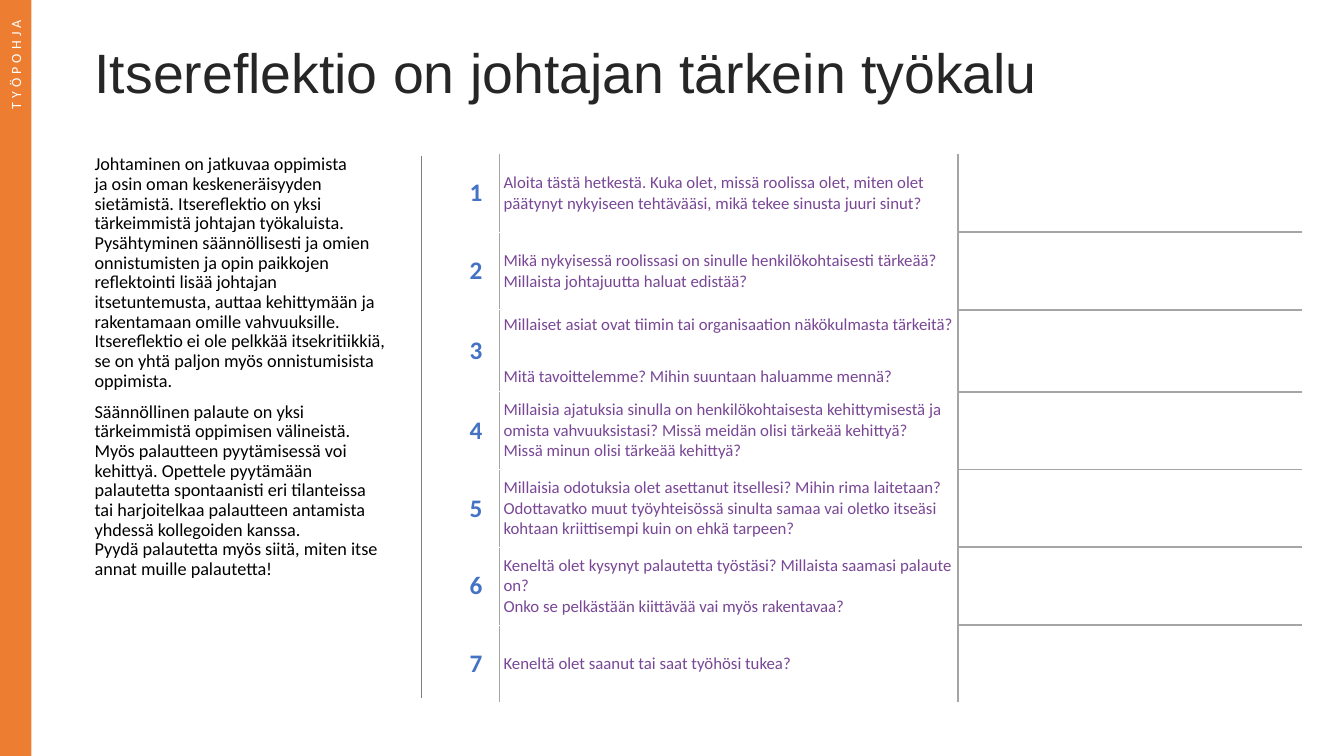
from lxml.etree import SubElement
from pptx import Presentation
from pptx.dml.color import RGBColor
from pptx.enum.shapes import MSO_CONNECTOR, MSO_SHAPE
from pptx.enum.text import MSO_ANCHOR as Anchor, MSO_AUTO_SIZE as AutoSize, PP_ALIGN as Align
from pptx.oxml.ns import qn
from pptx.util import Cm, Pt

COLORS = {
    "accent": "ED7D31", "number": "4472C4", "question": "794796", "grid": "A5A5A5",
    "divider": "7F7F7F", "title": "262626", "body": "000000", "white": "FFFFFF",
}

INTRO = [
    "Johtaminen on jatkuvaa oppimista\vja osin oman keskeneräisyyden sietämistä. "
    "Itsereflektio on yksi tärkeimmistä johtajan työkaluista. Pysähtyminen säännöllisesti "
    "ja omien onnistumisten ja opin paikkojen reflektointi lisää johtajan itsetuntemusta, "
    "auttaa kehittymään ja rakentamaan omille vahvuuksille. Itsereflektio ei ole pelkkää "
    "itsekritiikkiä, se on yhtä paljon myös onnistumisista oppimista.",
    "Säännöllinen palaute on yksi tärkeimmistä oppimisen välineistä. Myös palautteen "
    "pyytämisessä voi kehittyä. Opettele pyytämään palautetta spontaanisti eri tilanteissa "
    "tai harjoitelkaa palautteen antamista yhdessä kollegoiden kanssa.\v"
    "Pyydä palautetta myös siitä, miten itse annat muille palautetta!",
]

QUESTIONS = [
    "Aloita tästä hetkestä. Kuka olet, missä roolissa olet, miten olet\v"
    "päätynyt nykyiseen tehtävääsi, mikä tekee sinusta juuri sinut?",
    "Mikä nykyisessä roolissasi on sinulle henkilökohtaisesti tärkeää?\v"
    "Millaista johtajuutta haluat edistää?",
    "Millaiset asiat ovat tiimin tai organisaation näkökulmasta tärkeitä? \v"
    "Mitä tavoittelemme? Mihin suuntaan haluamme mennä?",
    "Millaisia ajatuksia sinulla on henkilökohtaisesta kehittymisestä ja\v"
    "omista vahvuuksistasi? Missä meidän olisi tärkeää kehittyä?\v"
    "Missä minun olisi tärkeää kehittyä?",
    "Millaisia odotuksia olet asettanut itsellesi? Mihin rima laitetaan?\v"
    "Odottavatko muut työyhteisössä sinulta samaa vai oletko itseäsi\v"
    "kohtaan kriittisempi kuin on ehkä tarpeen?",
    "Keneltä olet kysynyt palautetta työstäsi? Millaista saamasi palaute on?\v"
    "Onko se pelkästään kiittävää vai myös rakentavaa?",
    "Keneltä olet saanut tai saat työhösi tukea?",
]


def rgb(name):
    return RGBColor.from_string(COLORS[name])


def write(frame, *paragraphs, size, color, font="Calibri", bold=False, align=Align.LEFT,
          line_spacing=1.0, after=0, tracking=None):
    """Fill a text frame with unbulleted paragraphs that share one format."""
    frame.word_wrap = True
    for index, wording in enumerate(paragraphs):
        paragraph = frame.paragraphs[0] if index == 0 else frame.add_paragraph()
        paragraph.text = wording
        paragraph.alignment = align
        paragraph.line_spacing = line_spacing
        paragraph.space_before, paragraph.space_after = Pt(0), Pt(after)
        properties = paragraph._p.get_or_add_pPr()
        properties.set("marL", "0")
        properties.set("indent", "0")
        SubElement(properties, qn("a:buNone"))
        for run in paragraph.runs:
            run.font.name, run.font.size, run.font.bold = font, Pt(size), bold
            run.font.color.rgb = rgb(color)
            if tracking:
                run._r.get_or_add_rPr().set("spc", str(tracking * 100))


def set_borders(cell, **sides):
    """Draw cell borders; each side is a (colour name, points) pair or None."""
    properties = cell._tc.get_or_add_tcPr()
    for side in "LRTB":
        style = sides.get(side)
        border = SubElement(properties, qn(f"a:ln{side}"))
        if style is None:
            SubElement(border, qn("a:noFill"))
        else:
            border.set("w", str(Pt(style[1])))
            fill = SubElement(border, qn("a:solidFill"))
            SubElement(fill, qn("a:srgbClr"), val=COLORS[style[0]])


class WorkshopSlide:
    GRID = ("grid", 1.5)
    GAP = ("white", 0.75)

    def __init__(self, presentation):
        self.slide = presentation.slides.add_slide(presentation.slide_layouts[1])
        self.shapes = self.slide.shapes

    def placeholder(self, index, box, *paragraphs, anchor, **style):
        holder = self.slide.placeholders[index]
        holder.left, holder.top, holder.width, holder.height = map(Cm, box)
        holder.text_frame.auto_size = AutoSize.NONE
        holder.text_frame.vertical_anchor = anchor
        write(holder.text_frame, *paragraphs, line_spacing=0.9, **style)

    def side_band(self, box, label):
        band = self.shapes.add_shape(MSO_SHAPE.RECTANGLE, *map(Cm, box))
        band.shadow.inherit = False
        band.fill.solid()
        band.fill.fore_color.rgb = rgb("accent")
        band.line.fill.background()
        frame = band.text_frame
        frame.margin_top = Cm(0.51)
        frame.vertical_anchor = Anchor.MIDDLE
        frame._txBody.bodyPr.set("vert", "vert270")
        write(frame, label, size=10, color="white", align=Align.RIGHT, tracking=3)

    def divider(self, x, top, bottom):
        line = self.shapes.add_connector(MSO_CONNECTOR.STRAIGHT, Cm(x), Cm(top), Cm(x), Cm(bottom))
        line.line.color.rgb = rgb("divider")
        line.line.width = Pt(0.5)
        SubElement(line._element.spPr, qn("a:effectLst"))

    def question_table(self, left, top, widths, row_height, questions):
        """Numbered questions, each followed by an empty field for the answer."""
        count = len(questions)
        table = self.shapes.add_table(count, len(widths), Cm(left), Cm(top),
                                      Cm(sum(widths)), Cm(row_height * count)).table
        table.first_row = table.horz_banding = False
        for column, width in zip(table.columns, widths):
            column.width = Cm(width)
        for index, question in enumerate(questions):
            table.rows[index].height = Cm(row_height)
            number, prompt, answer = table.rows[index].cells
            last = index == count - 1
            set_borders(number, R=self.GRID, T=self.GAP, B=self.GAP)
            set_borders(prompt, L=self.GRID, R=self.GRID, T=self.GAP, B=self.GAP)
            set_borders(answer, L=self.GRID, T=self.GRID if index else None,
                        B=None if last else self.GRID)
            for cell in (number, prompt):
                cell.fill.background()
                cell.vertical_anchor = Anchor.MIDDLE
                cell.margin_left = cell.margin_right = Cm(0.1)
            answer.fill.solid()
            answer.fill.fore_color.rgb = rgb("white")
            write(number.text_frame, str(index + 1), size=18, color="number",
                  bold=True, align=Align.CENTER)
            write(prompt.text_frame, question, size=12, color="question")


def main():
    presentation = Presentation()
    presentation.slide_width, presentation.slide_height = Cm(33.87), Cm(19.05)
    page = WorkshopSlide(presentation)
    page.placeholder(0, (2.13, 1.19, 28.68, 1.45), "Itsereflektio on johtajan tärkein työkalu",
                     anchor=Anchor.MIDDLE, size=39.6, color="title", font="Arial")
    page.placeholder(1, (2.13, 3.78, 7.9, 14.55), *INTRO,
                     anchor=Anchor.TOP, size=13, color="body", after=8)
    page.question_table(11.4, 3.89, (1.19, 11.56, 8.66), 1.96, QUESTIONS)
    page.divider(10.62, 3.94, 17.58)
    page.side_band((0, 0, 0.79, 19.05), "TYÖPOHJA")
    presentation.save("out.pptx")


if __name__ == "__main__":
    main()
